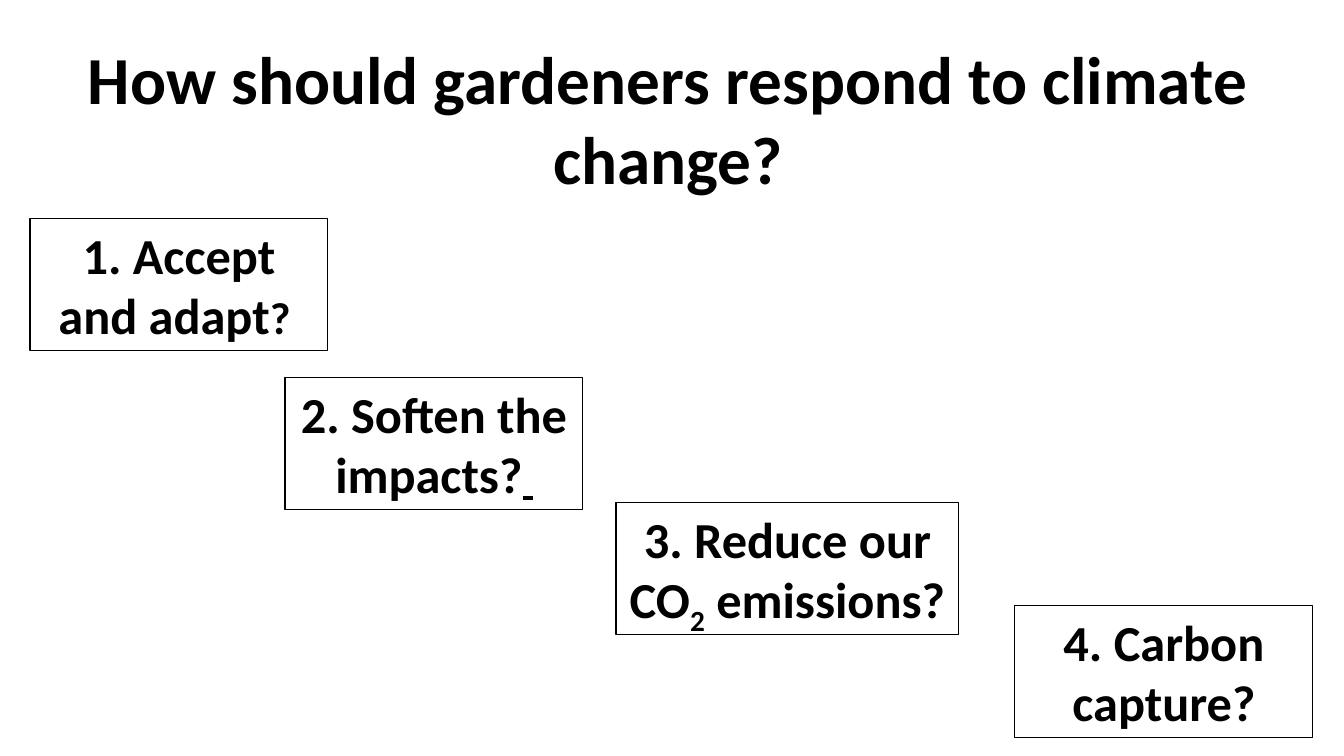
import pptx
import pptx.dml.color
import pptx.enum.shapes
import pptx.enum.text
import pptx.util

BLACK = pptx.dml.color.RGBColor(0, 0, 0)
WHITE = pptx.dml.color.RGBColor(255, 255, 255)
EMU_PER_PX = 914400 / 100.8
BOX_WIDTH, BOX_HEIGHT = 298, 132
TITLE_ONLY = 5


def px(length):
    return pptx.util.Emu(round(length * EMU_PER_PX))


def add_text(para, text, size=36, bold=True, underline=False, baseline=0):
    span = para.add_run()
    span.text = text
    font = span.font
    font.name = "Calibri"
    font.size = pptx.util.Pt(size)
    font.bold = bold
    font.color.rgb = BLACK
    if underline:
        font.underline = True
    if baseline:
        font._element.set("baseline", str(baseline * 1000))


class SlideBuilder:
    def __init__(self, deck):
        self.page = deck.slides.add_slide(deck.slide_layouts[TITLE_ONLY])
        self.page.background.fill.solid()
        self.page.background.fill.fore_color.rgb = WHITE

    def fill_text(self, shape, spans):
        frame = shape.text_frame
        frame.word_wrap = True
        frame.auto_size = pptx.enum.text.MSO_AUTO_SIZE.SHAPE_TO_FIT_TEXT
        frame.vertical_anchor = pptx.enum.text.MSO_ANCHOR.TOP
        para = frame.paragraphs[0]
        para.alignment = pptx.enum.text.PP_ALIGN.CENTER
        for text, style in spans:
            add_text(para, text, **style)

    def title(self, left, top, width, height, text):
        title = self.page.shapes.title
        title.left, title.top = px(left), px(top)
        title.width, title.height = px(width), px(height)
        self.fill_text(title, [(text, {"size": 48})])

    def box(self, left, top, spans, width=BOX_WIDTH):
        box = self.page.shapes.add_shape(
            pptx.enum.shapes.MSO_SHAPE.RECTANGLE,
            px(left), px(top), px(width), px(BOX_HEIGHT))
        box.shadow.inherit = False
        box.fill.background()
        box.line.color.rgb = BLACK
        box.line.width = pptx.util.Pt(0.75)
        self.fill_text(box, spans)


def main():
    deck = pptx.Presentation()
    deck.slide_width, deck.slide_height = px(1344), px(756)
    slide = SlideBuilder(deck)

    # Question
    slide.title(22, 32, 1292, 173,
                "How should gardeners respond to climate change?")

    # Responses, stepping down the slide
    slide.box(30, 219, [("1. Accept and adapt", {}), ("?", {"size": 32}),
                        (" ", {"size": 28, "bold": False})])
    slide.box(285, 378, [("2. Soften the impacts?", {}),
                         (" ", {"size": 32, "underline": True})])
    slide.box(616, 503, [("3. Reduce our CO", {}), ("2", {"baseline": -25}),
                         (" emissions?", {}),
                         (" ", {"size": 32, "bold": False})], width=343)
    slide.box(1015, 606, [("4. Carbon capture?", {})])

    deck.save("out.pptx")


if __name__ == "__main__":
    main()
